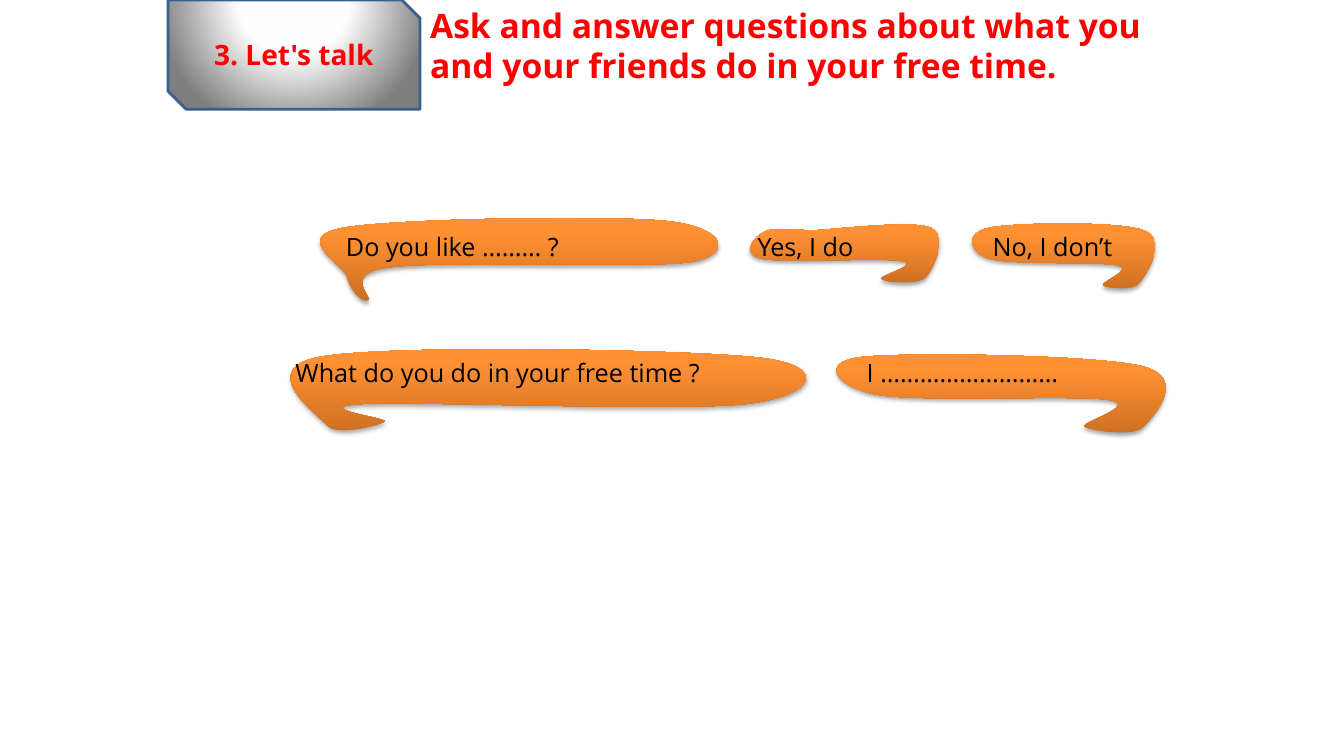
from lxml import etree
from pptx import Presentation, util as u
from pptx.dml.color import RGBColor
from pptx.enum import shapes, text
from pptx.oxml.ns import qn

COLUMNS, ROWS = 160, 90
COLORS = {"red": "FF0000", "black": "000000", "edge": "3A5F8C",
          "rust": "CC6E20", "orange": "FF9034", "amber": "FF9136",
          "white": "FFFFFF", "mist": "FEFEFE", "gray": "7F7F7F"}
BUBBLE_STOPS = [(0, "rust"), (80, "orange"), (100, "amber")]
BADGE_STOPS = [(0, "white"), (40, "mist"), (100, "gray")]


class Board:
    """Draws on one slide, with lengths in columns and rows of its grid."""

    font = "Open Sans"
    label = {"size": u.Pt(18), "bold": False}
    badge_label = {"size": u.Pt(20), "bold": True}
    heading = {"size": u.Pt(24), "bold": True}

    def __init__(self, deck):
        self.cell_width = deck.slide_width / COLUMNS
        self.cell_height = deck.slide_height / ROWS
        self.slide = deck.slides.add_slide(deck.slide_layouts[5])

    def point(self, column, row):
        return round(column * self.cell_width), round(row * self.cell_height)

    def area(self, column, row, width, height):
        return *self.point(column, row), *self.point(width, height)

    def set_text(self, shape, words, style, color, align=text.PP_ALIGN.LEFT):
        frame = shape.text_frame
        frame.word_wrap = True
        para = frame.paragraphs[0]
        para.alignment = align
        span = para.add_run()
        span.text = words
        for name, value in {"name": self.font, **style}.items():
            setattr(span.font, name, value)
        span.font.color.rgb = RGBColor.from_string(COLORS[color])
        return frame

    def title(self, words, *area):
        box = self.slide.shapes.title
        box.left, box.top, box.width, box.height = self.area(*area)
        frame = self.set_text(box, words, self.heading, "red")
        frame.auto_size = text.MSO_AUTO_SIZE.SHAPE_TO_FIT_TEXT
        frame.vertical_anchor = text.MSO_ANCHOR.TOP

    def text_box(self, words, *area):
        box = self.slide.shapes.add_textbox(*self.area(*area))
        frame = self.set_text(box, words, self.label, "black")
        frame.auto_size = text.MSO_AUTO_SIZE.SHAPE_TO_FIT_TEXT

    def gradient(self, shape, stops):
        """Fill with the stops and return the fill element, still without a direction."""
        shape.fill.gradient()
        fill = next(shape.element.iter(qn("a:gradFill")))
        for child in list(fill):
            fill.remove(child)
        stop_list = etree.SubElement(fill, qn("a:gsLst"))
        for percent, color in stops:
            stop = etree.SubElement(stop_list, qn("a:gs"), pos=str(percent * 1000))
            etree.SubElement(stop, qn("a:srgbClr"), val=COLORS[color])
        return fill

    def badge(self, words, *area):
        shape = self.slide.shapes.add_shape(
            shapes.MSO_SHAPE.SNIP_2_DIAG_RECTANGLE, *self.area(*area))
        shape.shadow.inherit = False
        glow = etree.SubElement(self.gradient(shape, BADGE_STOPS), qn("a:path"), {"path": "circle"})
        etree.SubElement(glow, qn("a:fillToRect"), l="50000", t="-80000", r="50000", b="180000")
        shape.line.color.rgb = RGBColor.from_string(COLORS["edge"])
        shape.line.width = u.Pt(2)
        frame = self.set_text(shape, words, self.badge_label, "red", text.PP_ALIGN.CENTER)
        frame.vertical_anchor = text.MSO_ANCHOR.MIDDLE

    def bubble(self, outline):
        """Draw a closed curve: a start, then two controls and an end per stretch."""
        points = [self.point(*spot) for spot in outline]
        builder = self.slide.shapes.build_freeform(*points[0], scale=1.0)
        builder.add_line_segments(points[1:] + points[:1], close=True)
        shape = builder.convert_to_shape()
        self.bend(shape)
        etree.SubElement(self.gradient(shape, BUBBLE_STOPS), qn("a:lin"), ang="16200000", scaled="0")
        shape.line.fill.background()
        self.drop_shadow(shape)

    @staticmethod
    def bend(shape):
        """Turn each three straight segments into one Bezier curve."""
        lines = list(shape.element.iter(qn("a:lnTo")))
        for first in range(0, len(lines), 3):
            curve = etree.Element(qn("a:cubicBezTo"))
            lines[first].addprevious(curve)
            for line in lines[first:first + 3]:
                curve.append(line[0])
                line.getparent().remove(line)

    @staticmethod
    def drop_shadow(shape):
        shape.shadow.inherit = False
        effects = next(shape.element.iter(qn("a:effectLst")))
        shadow = etree.SubElement(effects, qn("a:outerShdw"), blurRad=str(u.Pt(3.1)),
                                  dist=str(u.Pt(1.8)), dir="5400000", rotWithShape="0")
        color = etree.SubElement(shadow, qn("a:srgbClr"), val=COLORS["black"])
        etree.SubElement(color, qn("a:alpha"), val="35000")


# Each speech bubble: words, text area, outline
BUBBLES = [
    ("Do you like ……… ?", (40, 27, 48, 4.8), [
        (40.9, 27.1), (47.2, 26), (72.4, 25.6), (79.3, 26.3),
        (86.2, 27), (87.7, 30.2), (82.2, 31.2), (76.8, 32), (53, 31), (46.6, 31.8),
        (40.2, 32.5), (44.8, 35.6), (43.8, 35.8), (43, 36), (41.6, 34.4), (41.3, 32.9),
        (40.8, 31.4), (34.6, 28.2)]),
    ("What do you do in your free time ?", (34, 42, 62, 4.8), [
        (38.6, 42.4), (47.3, 41), (82.2, 41.6), (90.6, 42.6),
        (99, 43.6), (96.8, 47.2), (88.9, 48.1), (81, 49), (50.5, 47.8), (43.3, 48.1),
        (36.1, 48.5), (46.6, 49.8), (45.8, 50.2), (45.1, 50.6), (40.1, 52), (38.9, 50.6),
        (37.7, 49.3), (30, 43.7)]),
    ("Yes, I do", (89, 27, 20, 4.8), [
        (110.8, 27.1), (108.6, 26.2), (100.3, 27.2), (97.1, 27.4),
        (93.7, 27.4), (91.9, 27), (91, 27.6), (89.9, 28.1), (88, 30.2), (90.7, 30.8),
        (93.5, 31.4), (105, 30.6), (107.4, 31.1), (109.8, 31.4), (104.4, 32.9), (104.9, 33.2),
        (105.4, 33.6), (109.2, 34), (110.2, 33), (111.1, 32), (113, 28.1)]),
    ("No, I don’t", (117, 27, 23, 4.8), [
        (136.1, 27.4), (133.1, 26.3), (120.8, 26.5), (117.8, 27.1),
        (114.8, 27.7), (115.3, 30.1), (117.8, 30.8), (120.4, 31.6), (130.7, 31.1), (133, 31.6),
        (135.2, 32), (130.9, 33.6), (131.3, 34), (131.8, 34.3), (135, 34.7), (135.7, 33.6),
        (136.6, 32.5), (139.1, 28.4)]),
    ("I ………………………", (102, 42, 34, 5), [
        (136, 43.6), (130.3, 42.2), (107.8, 41.9), (102.5, 42.5),
        (97.3, 43.1), (99.7, 46.2), (104.5, 47), (109.4, 47.9), (127.8, 47), (131.9, 47.6),
        (136, 48.2), (128.4, 50.3), (129.1, 50.8), (129.8, 51.2), (135, 52.1), (136.1, 50.8),
        (137.3, 49.6), (141.5, 45)]),
]


def main():
    deck = Presentation()
    deck.slide_width, deck.slide_height = u.Inches(13.33), u.Inches(7.5)
    board = Board(deck)
    board.title("Ask and answer questions about what you and your friends do in your free time.",
                50, 0, 90, 15.7)
    board.badge("3. Let's talk", 20, 0, 30, 13)
    for words, area, outline in BUBBLES:
        board.bubble(outline)
        board.text_box(words, *area)
    deck.save("out.pptx")


if __name__ == "__main__":
    main()
